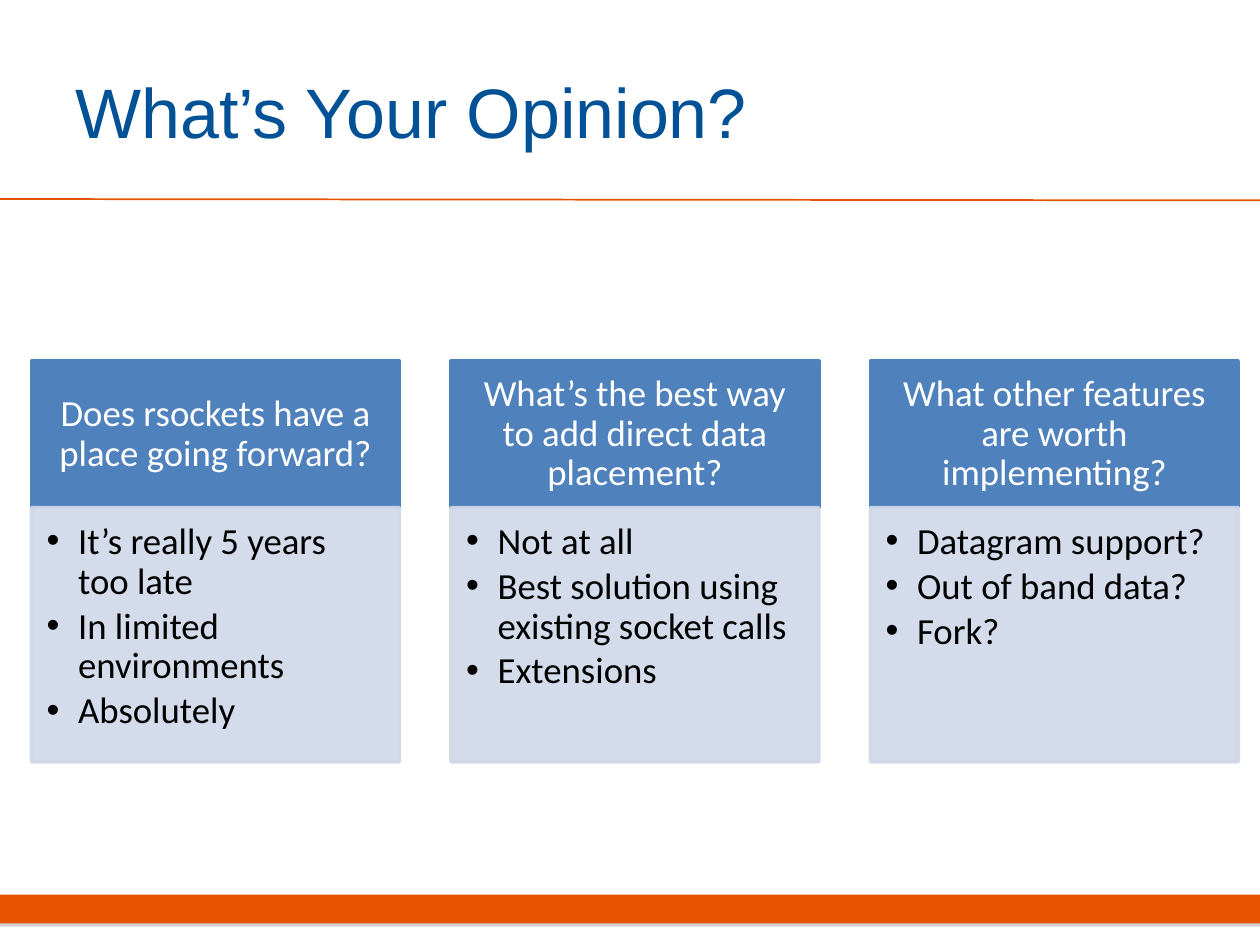
from lxml import etree
from pptx import Presentation
from pptx.dml.color import RGBColor
from pptx.enum.shapes import MSO_CONNECTOR, MSO_SHAPE
from pptx.enum.text import MSO_ANCHOR, PP_ALIGN
from pptx.oxml.ns import qn
from pptx.util import Pt

RECTANGLE = MSO_SHAPE.RECTANGLE
STRAIGHT = MSO_CONNECTOR.STRAIGHT
MIDDLE, TOP = MSO_ANCHOR.MIDDLE, MSO_ANCHOR.TOP
LEFT, CENTER = PP_ALIGN.LEFT, PP_ALIGN.CENTER

COLORS = {
    "orange": "E55302",
    "title": "005195",
    "header": "4F81BD",
    "body": "D0D8E8",
    "white": "FFFFFF",
    "black": "000000",
    "shadow": "808080",
}
COLUMNS = [
    ("Does rsockets have a place going forward?",
     ["It’s really 5 years too late", "In limited environments", "Absolutely"]),
    ("What’s the best way to add direct data placement?",
     ["Not at all", "Best solution using existing socket calls", "Extensions"]),
    ("What other features are worth implementing?",
     ["Datagram support?", "Out of band data?", "Fork?"]),
]


def add_panel(left, top, width, height, color, line_width=None):
    panel = page.shapes.add_shape(RECTANGLE, Pt(left), Pt(top), Pt(width), Pt(height))
    panel.shadow.inherit = False
    panel.fill.solid()
    panel.fill.fore_color.rgb = RGBColor.from_string(COLORS[color])
    if line_width:
        panel.line.color.rgb = RGBColor.from_string(COLORS[color])
        panel.line.width = Pt(line_width)
    else:
        panel.line.fill.background()
    return panel


def write_text(box, lines, font, size, color, anchor, align, insets,
               spacing=1.0, after=0, bullets=False):
    frame = box.text_frame
    frame.word_wrap = True
    frame.vertical_anchor = anchor
    (frame.margin_left, frame.margin_top,
     frame.margin_right, frame.margin_bottom) = map(Pt, insets)
    for index, line in enumerate(lines):
        para = frame.add_paragraph() if index else frame.paragraphs[0]
        para.alignment = align
        para.line_spacing = spacing
        para.space_after = Pt(after)
        if bullets:
            properties = para._p.get_or_add_pPr()
            properties.set("marL", str(Pt(18)))
            properties.set("indent", str(Pt(-18)))
            etree.SubElement(properties, qn("a:buFont"), typeface="Arial")
            etree.SubElement(properties, qn("a:buChar"), char="•")
        span = para.add_run()
        span.text = line
        span.font.name = font
        span.font.size = Pt(size)
        span.font.color.rgb = RGBColor.from_string(COLORS[color])


deck = Presentation()
deck.slide_width, deck.slide_height = Pt(720), Pt(540)
page = deck.slides.add_slide(deck.slide_layouts[6])

# Footer bar with a soft shadow below it
footer = add_panel(0, 511.2, 720, 16.56, "orange")
effects = footer._element.spPr.find(qn("a:effectLst"))
shadow = etree.SubElement(effects, qn("a:outerShdw"), blurRad="0",
                          dist=str(Pt(1.8)), dir="5400000", rotWithShape="0")
shade = etree.SubElement(shadow, qn("a:srgbClr"), val=COLORS["shadow"])
etree.SubElement(shade, qn("a:alpha"), val="35000")

# Rule under the title
rule = page.shapes.add_connector(STRAIGHT, Pt(0), Pt(113.75), Pt(720), Pt(114.5))
rule.line.color.rgb = RGBColor.from_string(COLORS["orange"])
rule.line.width = Pt(1)
etree.SubElement(rule._element.spPr, qn("a:effectLst"))

# Title
title = page.shapes.add_textbox(Pt(36), Pt(18), Pt(588), Pt(90))
write_text(title, ["What’s Your Opinion?"], "Arial", 40, "title",
           MIDDLE, LEFT, (7.2, 3.6, 7.2, 3.6))

# Three columns: a question above its possible answers
for number, (question, answers) in enumerate(COLUMNS):
    left = 18 + number * 239.7
    header = add_panel(left, 206.4, 210.24, 83.6, "header", 2)
    write_text(header, [question], "Calibri", 21, "white", MIDDLE, CENTER,
               (11.5, 6.5, 11.5, 6.5), spacing=0.9)

    body = add_panel(left, 290, 210.24, 145.4, "body", 2)
    for tint in body._element.spPr.iter(qn("a:srgbClr")):
        etree.SubElement(tint, qn("a:alpha"), val="90000")
    write_text(body, answers, "Calibri", 21, "black", TOP, LEFT,
               (8.64, 8.64, 11.5, 13), spacing=0.9, after=3, bullets=True)

deck.save("out.pptx")
